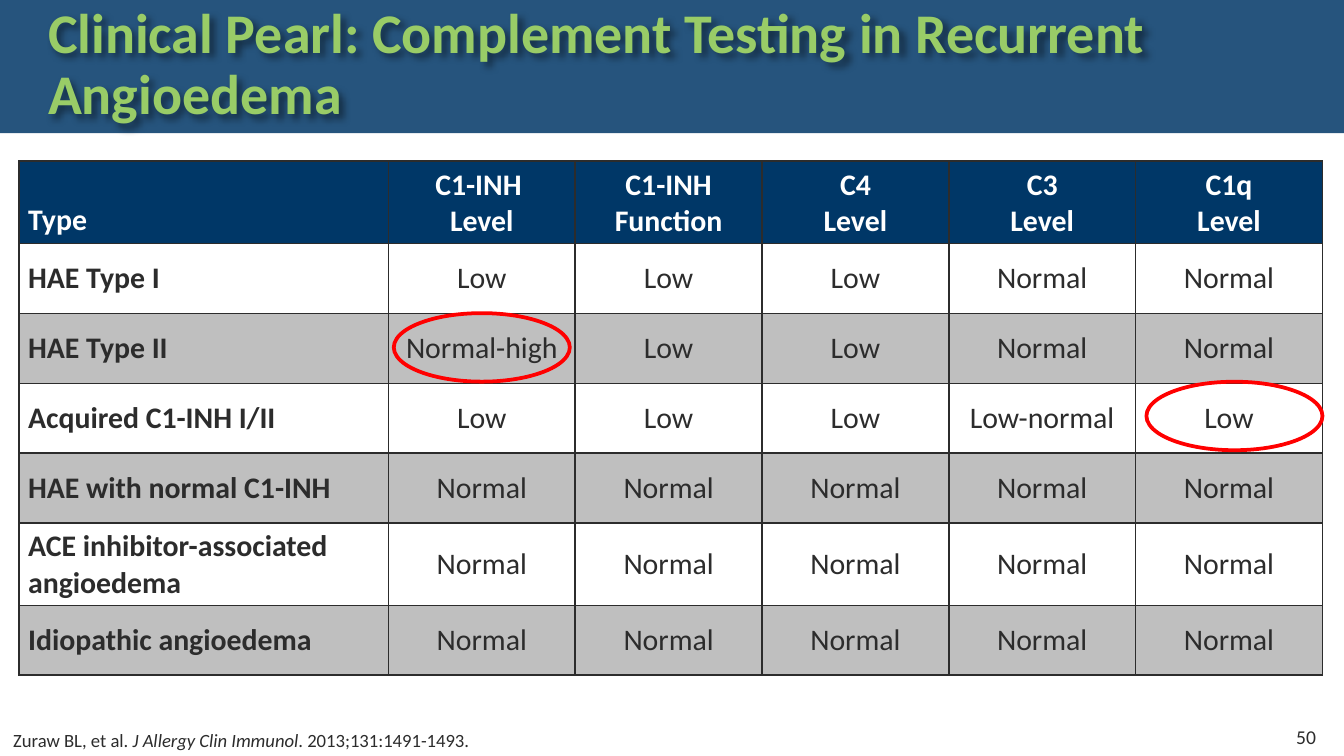
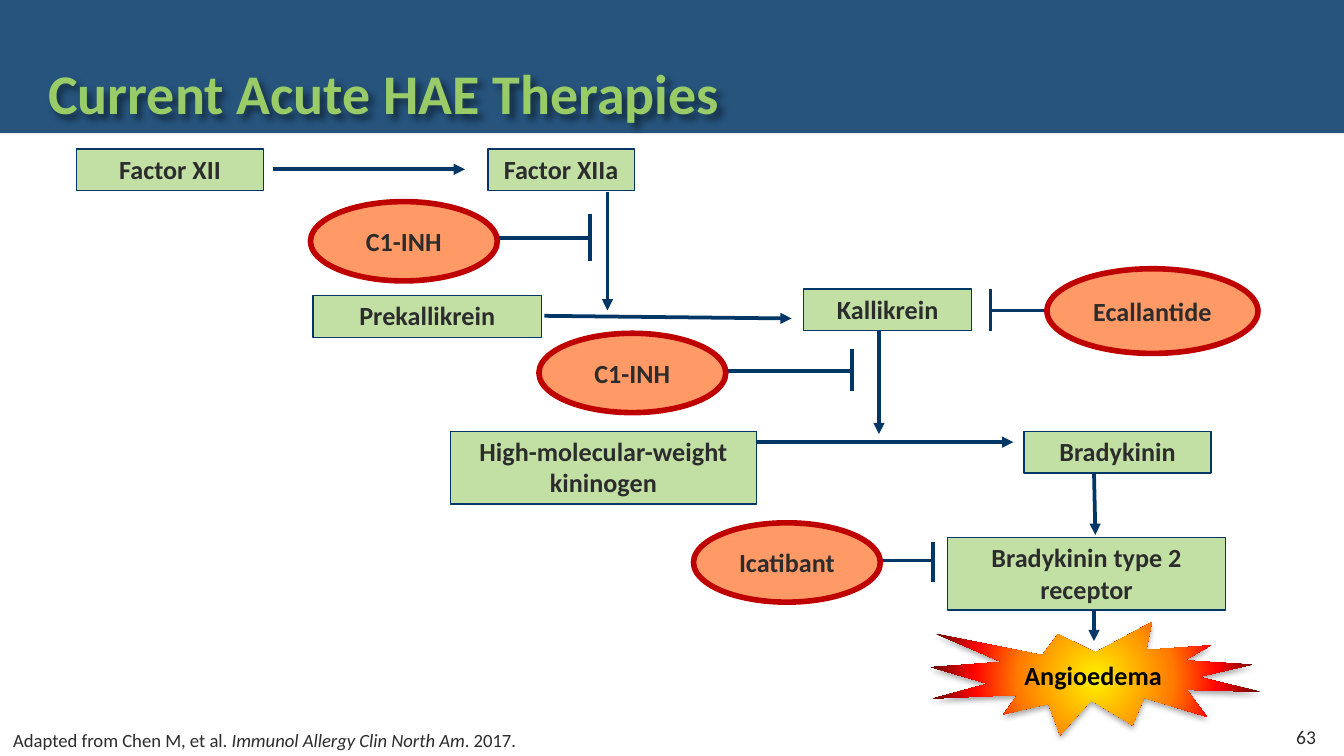
from dataclasses import dataclass
from lxml.etree import SubElement
from pptx import Presentation
from pptx.dml.color import RGBColor
from pptx.enum.shapes import MSO_CONNECTOR, MSO_SHAPE
from pptx.enum.text import MSO_ANCHOR as Anchor, PP_ALIGN as Align
from pptx.oxml import parse_xml
from pptx.oxml.ns import nsdecls, qn
from pptx.util import Inches, Pt


@dataclass(frozen=True)
class Theme:
    font: str = "Calibri"
    navy: str = "003767"
    lime: str = "99CC67"
    ink: str = "2C2C2C"
    black: str = "000000"
    white: str = "FFFFFF"
    stripe: str = "BFBFBF"
    ring: str = "FF0000"
    factor: str = "C2E0A4"
    drug: str = "FF9966"
    drug_edge: str = "BF0000"
    burst: tuple = ((0, "FFF200"), (45, "FF7A00"), (70, "FF0300"), (100, "4D0808"))
    title_size: float = 30
    table_size: float = 16
    label_size: float = 14
    number_size: float = 10.5
    citation_size: float = 10


THEME = Theme()

# Slide content: citations are (before, journal, after)
TESTING = {
    "title": "Clinical Pearl: Complement Testing in Recurrent Angioedema",
    "citation": ("Zuraw BL, et al. ", "J Allergy Clin Immunol", ". 2013;131:1491-1493."),
    "number": "50",
}
TEST_ROWS = [
    ("Type", "C1-INH \nLevel", "C1-INH Function", "C4\nLevel", "C3\nLevel", "C1q\nLevel"),
    ("HAE Type I", "Low", "Low", "Low", "Normal", "Normal"),
    ("HAE Type II", "Normal-high", "Low", "Low", "Normal", "Normal"),
    ("Acquired C1-INH I/II", "Low", "Low", "Low", "Low-normal", "Low"),
    ("HAE with normal C1-INH",) + ("Normal",) * 5,
    ("ACE inhibitor-associated angioedema",) + ("Normal",) * 5,
    ("Idiopathic angioedema",) + ("Normal",) * 5,
]
TABLE_AT = (0.14, 1.2)
TYPE_WIDTH, TEST_WIDTH = 2.75, 1.39
HEADER_HEIGHT, ROW_HEIGHT = 0.6, 0.52
RINGS = [(2.93, 2.33, 1.31, 0.51), (8.53, 2.84, 1.31, 0.51)]

THERAPIES = {
    "title": "Current Acute HAE Therapies",
    "citation": ("Adapted from Chen M, et al. ", "Immunol Allergy Clin North Am", ". 2017."),
    "number": "63",
}
ONE_LINE, TWO_LINES = 0.31, 0.54
FACTORS = [  # text, left, top, width, height
    ("Factor XII", 0.57, 1.11, 1.39, ONE_LINE),
    ("Factor XIIa", 3.63, 1.11, 1.09, ONE_LINE),
    ("Prekallikrein", 2.33, 2.2, 1.7, ONE_LINE),
    ("Kallikrein", 5.98, 2.15, 1.25, ONE_LINE),
    ("Bradykinin", 7.62, 3.21, 1.39, ONE_LINE),
    ("Bradykinin type 2 receptor", 7.05, 4, 2.07, TWO_LINES),
    ("High-molecular-weight kininogen", 3.35, 3.21, 2.28, TWO_LINES),
]
DRUGS = [
    ("C1-INH", 2.31, 1.5, 1.39, 0.59),
    ("Ecallantide", 7.79, 2, 1.57, 0.63),
    ("C1-INH", 4.01, 2.48, 1.39, 0.59),
    ("Icatibant", 5.16, 3.89, 1.39, 0.59),
]
ARROWS = [  # start x, start y, end x, end y
    (2.03, 1.26, 3.46, 1.26),
    (4.52, 1.43, 4.52, 2.31),
    (4.05, 2.35, 5.89, 2.37),
    (5.6, 3.29, 7.54, 3.29),
    (6.54, 2.46, 6.54, 3.23),
    (8.14, 3.51, 8.15, 3.98),
    (8.14, 4.54, 8.14, 4.77),
]
INHIBITIONS = [  # stem start x, bar x, stem y, bar top, bar bottom
    (3.69, 4.39, 1.77, 1.59, 1.94),
    (7.78, 7.37, 2.31, 2.15, 2.46),
    (5.41, 6.34, 2.76, 2.6, 2.91),
    (6.55, 6.94, 4.17, 4.03, 4.33),
]
OUTCOME = ("Angioedema", 6.93, 4.63, 2.44, 0.84)


def rgb(color):
    return RGBColor.from_string(color)


def style_font(font, size, color, bold=False):
    font.name, font.size, font.bold = THEME.font, Pt(size), bold
    font.color.rgb = rgb(color)


def set_insets(holder, horizontal, vertical):
    holder.margin_left = holder.margin_right = Inches(horizontal)
    holder.margin_top = holder.margin_bottom = Inches(vertical)


def add_shadow(shape, blur, distance, angle, opacity):
    shape.shadow.inherit = False
    effects = shape._element.spPr.find(qn("a:effectLst"))
    shadow = SubElement(effects, qn("a:outerShdw"), blurRad=str(Pt(blur)),
                        dist=str(Pt(distance)), dir=str(angle * 60000),
                        algn="ctr", rotWithShape="0")
    color = SubElement(shadow, qn("a:srgbClr"), val=THEME.black)
    SubElement(color, qn("a:alpha"), val=str(opacity * 1000))


def add_shape(slide, preset, box, fill=None, line=None, weight=1):
    shape = slide.shapes.add_shape(preset, *map(Inches, box))
    shape.shadow.inherit = False
    if fill:
        shape.fill.solid()
        shape.fill.fore_color.rgb = rgb(fill)
    else:
        shape.fill.background()
    if line:
        shape.line.color.rgb = rgb(line)
        shape.line.width = Pt(weight)
    else:
        shape.line.fill.background()
    return shape


def add_label(shape, text, anchor=Anchor.MIDDLE, color=THEME.ink):
    frame = shape.text_frame
    frame.word_wrap = True
    frame.vertical_anchor = anchor
    set_insets(frame, 0.07, 0.03)
    frame.text = text
    paragraph = frame.paragraphs[0]
    paragraph.alignment = Align.CENTER
    style_font(paragraph.font, THEME.label_size, color, bold=True)


def add_line(slide, start_x, start_y, end_x, end_y, arrow=False):
    line = slide.shapes.add_connector(
        MSO_CONNECTOR.STRAIGHT, *map(Inches, (start_x, start_y, end_x, end_y)))
    line.line.color.rgb = rgb(THEME.navy)
    line.line.width = Pt(2)
    if arrow:
        SubElement(line.line._get_or_add_ln(), qn("a:tailEnd"), type="triangle")
    SubElement(line._element.spPr, qn("a:effectLst"))


def add_text_box(slide, box, anchor):
    """Add an empty wrapping text box; return it and its first paragraph."""
    shape = slide.shapes.add_textbox(*map(Inches, box))
    frame = shape.text_frame
    frame.word_wrap = True
    frame.vertical_anchor = anchor
    return shape, frame.paragraphs[0]


def add_title(slide, text):
    shape, paragraph = add_text_box(slide, (0.26, 0.25, 8.94, 0.74), Anchor.BOTTOM)
    paragraph.text = text
    paragraph.line_spacing = 0.9
    style_font(paragraph.font, THEME.title_size, THEME.lime, bold=True)
    add_shadow(shape, 4, 3, 45, 45)


def add_frame(presentation, content):
    """Add a slide with the band, title, citation and slide number."""
    slide = presentation.slides.add_slide(presentation.slide_layouts[6])
    band = add_shape(slide, MSO_SHAPE.RECTANGLE, (0, 0, 10, 0.99), THEME.navy)
    color = band._element.spPr.find(qn("a:solidFill"))[0]
    SubElement(color, qn("a:alpha"), val="85000")
    add_title(slide, content["title"])

    _, citation = add_text_box(slide, (0, 5.37, 4.81, 0.27), Anchor.BOTTOM)
    style_font(citation.font, THEME.citation_size, THEME.ink)
    for position, part in enumerate(content["citation"]):
        run = citation.add_run()
        run.text = part
        run.font.italic = position == 1

    _, number = add_text_box(slide, (9.43, 5.33, 0.46, 0.3), Anchor.MIDDLE)
    number.text = content["number"]
    number.alignment = Align.RIGHT
    style_font(number.font, THEME.number_size, THEME.ink)
    return slide


def add_borders(cell):
    properties = cell._tc.get_or_add_tcPr()
    for side in ("lnL", "lnR", "lnT", "lnB"):
        border = SubElement(properties, qn(f"a:{side}"), w=str(Pt(1)))
        fill = SubElement(border, qn("a:solidFill"))
        SubElement(fill, qn("a:srgbClr"), val=THEME.ink)


def style_cell(cell, text, row, column):
    header = row == 0
    set_insets(cell, 0.07, 0.04)
    cell.vertical_anchor = Anchor.BOTTOM if header else Anchor.MIDDLE
    add_borders(cell)
    if header or row % 2 == 0:
        cell.fill.solid()
        cell.fill.fore_color.rgb = rgb(THEME.navy if header else THEME.stripe)
    else:
        cell.fill.background()
    cell.text = text
    for paragraph in cell.text_frame.paragraphs:
        paragraph.alignment = Align.CENTER if column else Align.LEFT
        style_font(paragraph.font, THEME.table_size,
                   THEME.white if header else THEME.ink,
                   bold=header or column == 0)


def build_testing(presentation):
    slide = add_frame(presentation, TESTING)
    widths = [TYPE_WIDTH] + [TEST_WIDTH] * (len(TEST_ROWS[0]) - 1)
    heights = [HEADER_HEIGHT] + [ROW_HEIGHT] * (len(TEST_ROWS) - 1)
    table = slide.shapes.add_table(
        len(heights), len(widths),
        *map(Inches, (*TABLE_AT, sum(widths), sum(heights)))).table
    table.first_row = table.horz_banding = False
    for column, width in zip(table.columns, widths):
        column.width = Inches(width)
    for row, height in zip(table.rows, heights):
        row.height = Inches(height)
    for row, texts in enumerate(TEST_ROWS):
        for column, text in enumerate(texts):
            style_cell(table.cell(row, column), text, row, column)
    for box in RINGS:
        add_shape(slide, MSO_SHAPE.OVAL, box, line=THEME.ring, weight=2)


def add_outcome(slide, text, *box):
    """Add the burst with a radial gradient and a soft shadow."""
    burst = add_shape(slide, MSO_SHAPE.EXPLOSION1, box, THEME.burst[0][1])
    stops = "".join(f'<a:gs pos="{position * 1000}"><a:srgbClr val="{color}"/></a:gs>'
                    for position, color in THEME.burst)
    gradient = parse_xml(
        f'<a:gradFill {nsdecls("a")} rotWithShape="1"><a:gsLst>{stops}</a:gsLst>'
        '<a:path path="circle"><a:fillToRect l="50000" t="50000" r="50000" b="50000"/>'
        '</a:path></a:gradFill>')
    properties = burst._element.spPr
    properties.replace(properties.find(qn("a:solidFill")), gradient)
    add_shadow(burst, 3.1, 1.8, 90, 35)
    add_label(burst, text, color=THEME.black)


def build_therapies(presentation):
    slide = add_frame(presentation, THERAPIES)
    for start_x, bar_x, y, top, bottom in INHIBITIONS:
        add_line(slide, start_x, y, bar_x, y)
        add_line(slide, bar_x, top, bar_x, bottom)
    for arrow in ARROWS:
        add_line(slide, *arrow, arrow=True)
    for text, *box in FACTORS:
        shape = add_shape(slide, MSO_SHAPE.RECTANGLE, box, THEME.factor, THEME.navy, 0.75)
        add_label(shape, text, Anchor.TOP)
    for text, *box in DRUGS:
        shape = add_shape(slide, MSO_SHAPE.OVAL, box, THEME.drug, THEME.drug_edge, 3)
        add_label(shape, text)
    add_outcome(slide, *OUTCOME)


def main():
    presentation = Presentation()
    presentation.slide_width = Inches(10)
    presentation.slide_height = presentation.slide_width * 9 // 16
    build_testing(presentation)
    build_therapies(presentation)
    presentation.save("out.pptx")


if __name__ == "__main__":
    main()
